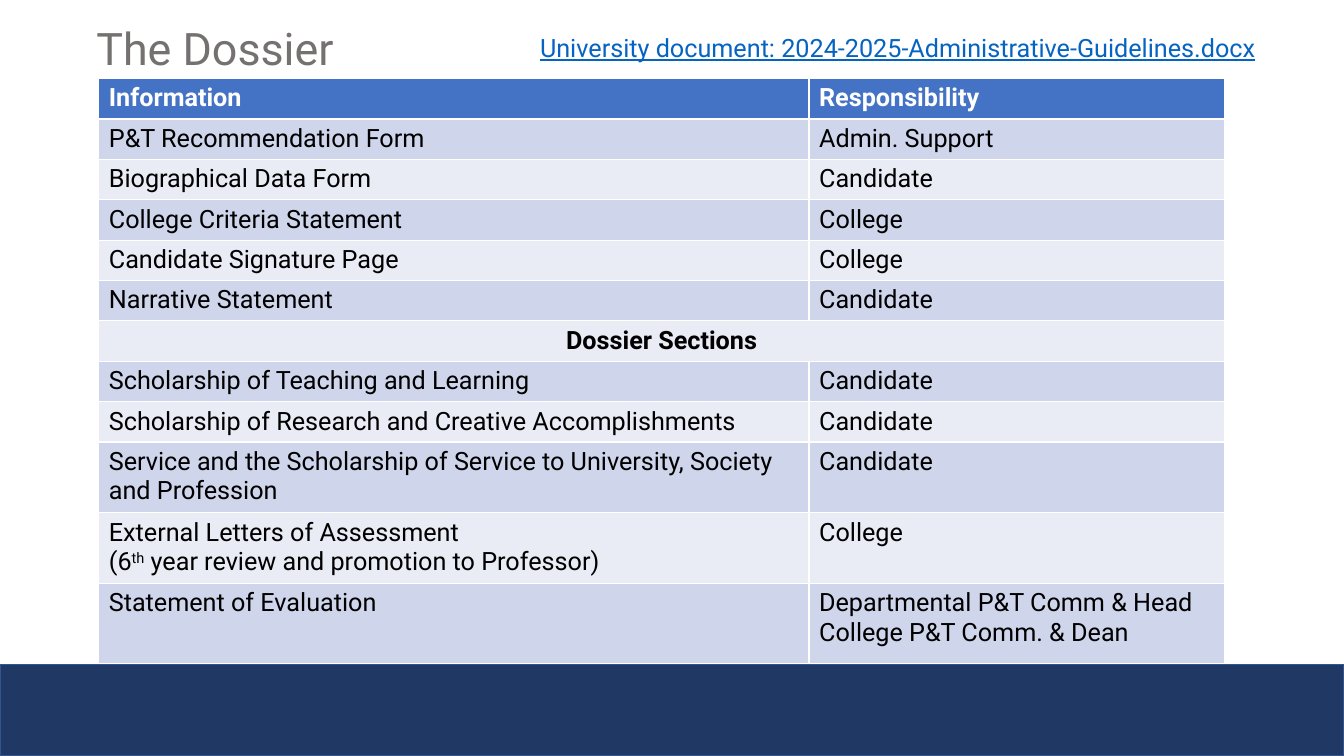
from dataclasses import dataclass

from pptx import Presentation
from pptx.dml.color import RGBColor
from pptx.enum.shapes import MSO_SHAPE
from pptx.enum.text import MSO_ANCHOR, PP_ALIGN
from pptx.util import Cm, Pt

TITLE = "The Dossier"
GUIDELINES = "University document: 2024-2025-Administrative-Guidelines.docx"
HEADER = ("Information", "Responsibility")
# Text between carets is set as superscript; a row with one entry spans the table.
FORMS = [
    ("P&T Recommendation Form", "Admin. Support"),
    ("Biographical Data Form", "Candidate"),
    ("College Criteria Statement", "College"),
    ("Candidate Signature Page", "College"),
    ("Narrative Statement", "Candidate"),
]
SECTION_HEADING = ("Dossier Sections",)
SECTIONS = [
    ("Scholarship of Teaching and Learning", "Candidate"),
    ("Scholarship of Research and Creative Accomplishments", "Candidate"),
    ("Service and the Scholarship of Service to University, Society and Profession",
     "Candidate"),
    ("External Letters of Assessment\n(6^th^ year review and promotion to Professor)",
     "College"),
    ("Statement of Evaluation", "Departmental P&T Comm & Head\nCollege P&T Comm. & Dean"),
]
ROWS = [HEADER, *FORMS, SECTION_HEADING, *SECTIONS]

COLUMN_WIDTHS = (17.9, 10.47)
ROW_HEIGHTS = [1.02] + [1] * len(FORMS) + [1.02, 1, 1, 1.74, 1.74, 2.03]
SLIDE_WIDTH, SLIDE_HEIGHT, FOOTER_HEIGHT = 33.87, 19.05, 2.31


@dataclass(frozen=True)
class Theme:
    font: str = "Roboto"
    title_size: int = 32
    body_size: int = 18
    title: str = "767171"
    link: str = "0563C1"
    text: str = "000000"
    header_text: str = "FFFFFF"
    header_fill: str = "4472C4"
    bands: tuple = ("E9EBF5", "CFD5EA")
    footer: str = "203864"
    footer_line: str = "325491"


THEME = Theme()


def write(frame, text, size=THEME.body_size, color=THEME.text, bold=False,
          underline=False, align=PP_ALIGN.LEFT, spacing=None):
    """Fill a text frame, one paragraph per line, with ^...^ as superscript."""
    frame.word_wrap = True
    for number, line in enumerate(text.split("\n")):
        paragraph = frame.add_paragraph() if number else frame.paragraphs[0]
        paragraph.alignment = align
        paragraph.line_spacing = spacing
        for part, words in enumerate(line.split("^")):
            run = paragraph.add_run()
            run.text = words
            font = run.font
            font.name, font.size, font.bold = THEME.font, Pt(size), bold
            font.underline = underline
            font.color.rgb = RGBColor.from_string(color)
            if part % 2:
                run._r.get_or_add_rPr().set("baseline", "30000")


def fill(target, color):
    target.fill.solid()
    target.fill.fore_color.rgb = RGBColor.from_string(color)


def add_footer(slide):
    footer = slide.shapes.add_shape(
        MSO_SHAPE.RECTANGLE, 0, Cm(SLIDE_HEIGHT - FOOTER_HEIGHT),
        Cm(SLIDE_WIDTH), Cm(FOOTER_HEIGHT))
    footer.shadow.inherit = False
    fill(footer, THEME.footer)
    footer.line.color.rgb = RGBColor.from_string(THEME.footer_line)
    footer.line.width = Pt(1)


def add_dossier_table(slide):
    table = slide.shapes.add_table(
        len(ROWS), len(COLUMN_WIDTHS), Cm(2.49), Cm(1.98),
        Cm(sum(COLUMN_WIDTHS)), Cm(sum(ROW_HEIGHTS))).table
    for column, width in zip(table.columns, COLUMN_WIDTHS):
        column.width = Cm(width)
    for r, (entries, height) in enumerate(zip(ROWS, ROW_HEIGHTS)):
        table.rows[r].height = Cm(height)
        is_header, is_heading = entries is HEADER, entries is SECTION_HEADING
        if is_heading:
            table.cell(r, 0).merge(table.cell(r, len(COLUMN_WIDTHS) - 1))
        for c, entry in enumerate(entries):
            cell = table.cell(r, c)
            fill(cell, THEME.header_fill if is_header else THEME.bands[r % 2])
            write(cell.text_frame, entry, bold=is_header or is_heading,
                  color=THEME.header_text if is_header else THEME.text,
                  align=PP_ALIGN.CENTER if is_heading else PP_ALIGN.LEFT)


def main():
    deck = Presentation()
    deck.slide_width, deck.slide_height = Cm(SLIDE_WIDTH), Cm(SLIDE_HEIGHT)
    slide = deck.slides.add_slide(deck.slide_layouts[6])
    add_footer(slide)

    title = slide.shapes.add_textbox(Cm(2.18), Cm(0.41), Cm(29.21), Cm(1.73)).text_frame
    title.vertical_anchor = MSO_ANCHOR.MIDDLE
    write(title, TITLE, size=THEME.title_size, color=THEME.title, spacing=0.9)

    add_dossier_table(slide)

    link = slide.shapes.add_textbox(Cm(13.36), Cm(0.69), Cm(19.71), Cm(1.02)).text_frame
    write(link, GUIDELINES, color=THEME.link, underline=True)
    deck.save("out.pptx")


if __name__ == "__main__":
    main()
